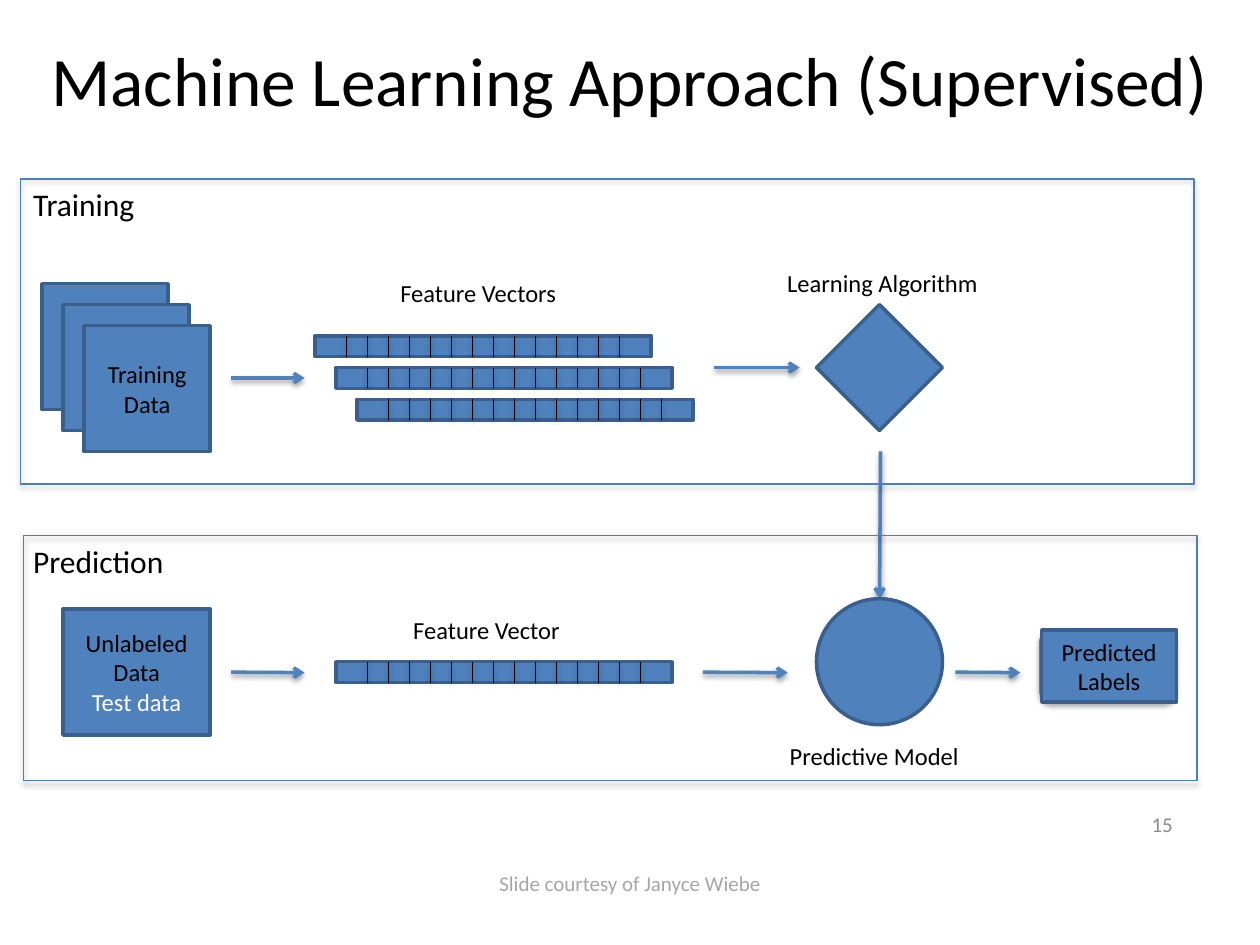
from pptx import Presentation
from pptx import util as u
from pptx.dml.color import RGBColor
from pptx.enum import shapes, text
from pptx.oxml import parse_xml
from pptx.oxml.ns import nsdecls

Cm, Pt = u.Cm, u.Pt
SHAPE, ALIGN = shapes.MSO_SHAPE, text.PP_ALIGN


def rgb(color):
    return RGBColor.from_string(color)


class Diagram:
    """Style of the slide and one method for each kind of element."""
    font = "Calibri"
    blue, edge, frame, black = "4F81BD", "3A5F8C", "4B7EBC", "000000"
    bar_w, bar_h, cell = 6.78, 0.42, 2.54 / 6

    def __init__(self, slide):
        self.s = slide

    def set_text(self, sp, words, size, color=black, align=ALIGN.CENTER):
        tf = sp.text_frame
        tf.text = words
        for p in tf.paragraphs:
            p.alignment = align
            for r in p.runs:
                r.font.name, r.font.size = self.font, Pt(size)
                r.font.color.rgb = rgb(color)

    def title(self, words, x, y, w, h):
        sp = self.s.shapes.title
        sp.left, sp.top, sp.width, sp.height = Cm(x), Cm(y), Cm(w), Cm(h)
        self.set_text(sp, words, 39.6)
        sp.text_frame.vertical_anchor = text.MSO_ANCHOR.MIDDLE

    def label(self, words, x, y, w, h, size=14, color=black,
              align=ALIGN.LEFT, wrap=False):
        sp = self.s.shapes.add_textbox(Cm(x), Cm(y), Cm(w), Cm(h))
        self.set_text(sp, words, size, color, align)
        sp.text_frame.word_wrap = wrap
        sp.text_frame.auto_size = text.MSO_AUTO_SIZE.SHAPE_TO_FIT_TEXT
        return sp

    def shadow(self, sp, opacity):
        sp._element.spPr.append(parse_xml(
            f'<a:effectLst {nsdecls("a")}><a:outerShdw blurRad="{Pt(3.1)}" '
            f'dist="{Pt(1.7)}" dir="5400000" rotWithShape="0">'
            f'<a:srgbClr val="000000"><a:alpha val="{opacity}000"/></a:srgbClr>'
            '</a:outerShdw></a:effectLst>'))

    def node(self, kind, x, y, w, h, words=""):
        sp = self.s.shapes.add_shape(kind, Cm(x), Cm(y), Cm(w), Cm(h))
        sp.shadow.inherit = False
        sp.fill.solid()
        sp.fill.fore_color.rgb = rgb(self.blue)
        sp.line.color.rgb, sp.line.width = rgb(self.edge), Pt(2)
        if words:
            self.set_text(sp, words, 14)
            sp.text_frame.vertical_anchor = text.MSO_ANCHOR.MIDDLE
        return sp

    def outlined(self, kind, x, y, w, h, stops=()):
        """Thin-lined shape with a shadow, filled by a gradient if given."""
        sp = self.s.shapes.add_shape(kind, Cm(x), Cm(y), Cm(w), Cm(h))
        if stops:
            sp.fill.gradient()
            sp.fill.gradient_angle = 90
            for stop, color in zip(sp.fill.gradient_stops, stops):
                stop.color.rgb = rgb(color)
        else:
            sp.fill.background()
        sp.line.color.rgb, sp.line.width = rgb(self.frame), Pt(0.75)
        self.shadow(sp, 35)

    def panel(self, words, x, y, w, h, label_w):
        self.outlined(SHAPE.RECTANGLE, x, y, w, h)
        self.label(words, 0.42, y, label_w, 1.02, size=18, wrap=True)

    def line(self, x1, y1, x2, y2, color=black, width=0.5):
        c = self.s.shapes.add_connector(shapes.MSO_CONNECTOR.STRAIGHT,
                                        Cm(x1), Cm(y1), Cm(x2), Cm(y2))
        c.line.color.rgb, c.line.width = rgb(color), Pt(width)
        self.shadow(c, 38)
        return c

    def arrow(self, x1, y1, x2, y2):
        c = self.line(x1, y1, x2, y2, self.blue, 2)
        c.line._get_or_add_ln().append(
            parse_xml(f'<a:tailEnd {nsdecls("a")} type="arrow"/>'))
        return c

    def vector(self, x, y):
        """Bar split into cells; the first and last are half a cell wider."""
        self.node(SHAPE.RECTANGLE, x, y, self.bar_w, self.bar_h)
        for i in range(14):
            cx = x + (i + 1.5) * self.cell
            self.line(cx, y, cx, y + self.bar_h)


def main():
    prs = Presentation()
    prs.slide_width, prs.slide_height = Cm(25.4), Cm(19.05)
    d = Diagram(prs.slides.add_slide(prs.slide_layouts[5]))
    d.title("Machine Learning Approach (Supervised)", 0, 0, 25.4, 3.18)
    number = d.label("15", 22.58, 15.88, 1.7, 1.45, 12, "8C8C8C",
                     ALIGN.CENTER, True)
    number.text_frame.auto_size = text.MSO_AUTO_SIZE.NONE
    number.text_frame.vertical_anchor = text.MSO_ANCHOR.MIDDLE

    # Training
    for i, words in enumerate(("", "", "Training Data")):
        step = i * d.cell
        d.node(SHAPE.RECTANGLE, 0.85 + step, 5.72 + step, 2.54, 2.54, words)
    d.label("Feature Vectors", 7.82, 5.49, 4.22, 0.86)
    for i in range(3):
        d.vector(6.35 + i * d.cell, 6.77 + i * 0.64)
    d.node(SHAPE.DIAMOND, 16.46, 6.14, 2.54, 2.54)
    d.label("Learning Algorithm", 15.62, 5.28, 5.13, 0.86)
    d.arrow(4.66, 7.62, 6.14, 7.62)
    d.arrow(14.4, 7.41, 16.12, 7.41)

    # Prediction
    learned = d.arrow(17.75, 9.1, 17.73, 12.07)
    model = d.node(SHAPE.OVAL, 16.46, 12.07, 2.54, 2.54)
    learned.end_connect(model, 0)
    d.label("Predictive Model", 15.67, 14.81, 4.39, 0.86)
    data = d.node(SHAPE.RECTANGLE, 1.27, 12.28, 2.97, 2.54,
                  "Unlabeled Data\nTest data")
    data.text_frame.paragraphs[1].runs[0].font.color.rgb = rgb("FFFFFF")
    d.vector(6.77, 13.34)
    for x1, x2 in ((4.66, 6.14), (14.17, 15.88), (19.26, 20.57)):
        d.arrow(x1, 13.55, x2, 13.56)
    d.outlined(SHAPE.ROUNDED_RECTANGLE, 20.96, 12.7, 2.74, 1.47,
               ("3F80CE", "A4C4FF"))
    labels = d.node(SHAPE.RECTANGLE, 21, 12.7, 2.72, 1.45, "Predicted\nLabels")
    labels.text_frame.word_wrap = False

    d.panel("Training", 0.42, 3.61, 23.65, 6.15, 3.81)
    d.panel("Prediction", 0.48, 10.8, 23.65, 4.93, 8.69)
    d.label("Feature Vector", 8.08, 12.27, 3.99, 0.86)
    d.label("Slide courtesy of Janyce Wiebe", 0, 17.42, 25.4, 0.76, 12,
            "A6A6A6", ALIGN.CENTER, True)
    prs.save("out.pptx")


if __name__ == "__main__":
    main()
